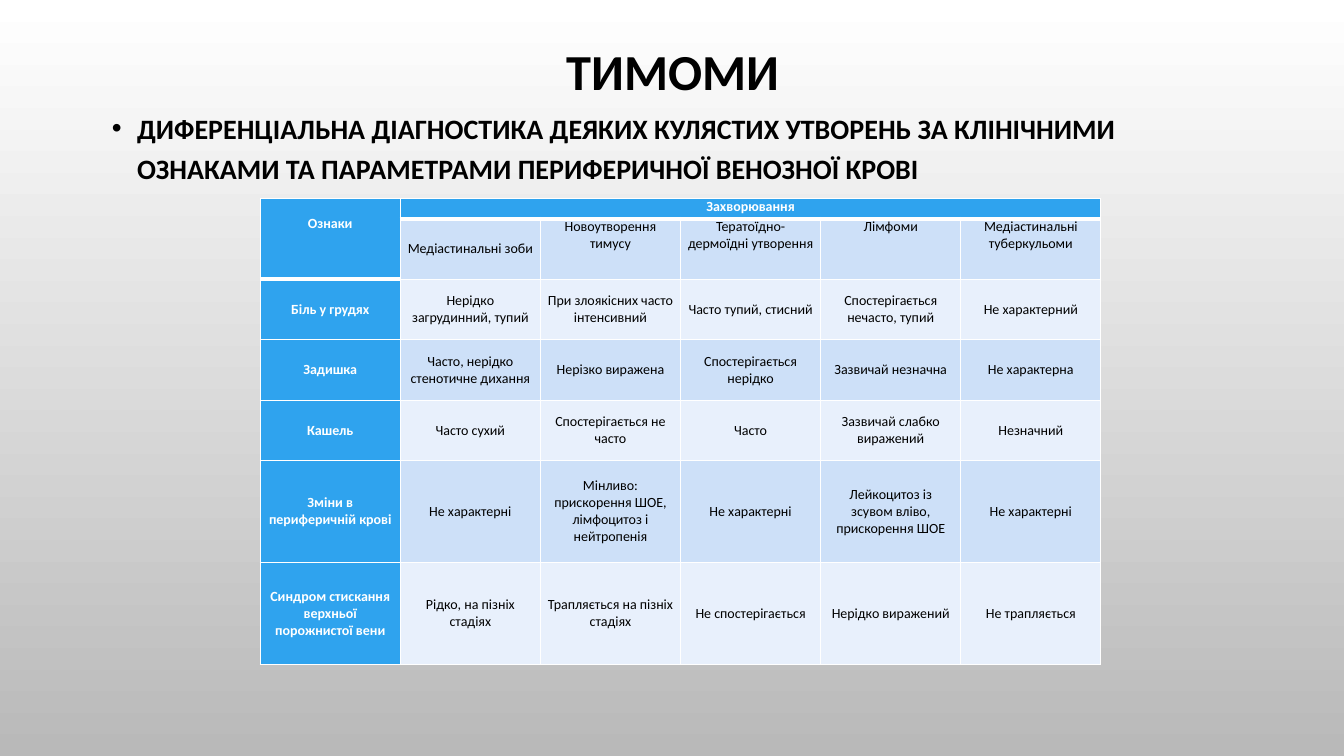
import pptx
import pptx.dml.color
import pptx.enum.text
import pptx.oxml
import pptx.oxml.ns
import pptx.util
from pptx.dml.color import RGBColor
from pptx.util import Inches

FONT = "Calibri"
BLACK = RGBColor(0x00, 0x00, 0x00)
WHITE = RGBColor(0xFF, 0xFF, 0xFF)
GREY = RGBColor(0xB9, 0xB9, 0xB9)
BLUE = RGBColor(0x2F, 0xA3, 0xEE)
BANDS = (RGBColor(0xE8, 0xF0, 0xFC), RGBColor(0xCD, 0xE0, 0xF8))

TOPIC = (
    "ДИФЕРЕНЦІАЛЬНА ДІАГНОСТИКА ДЕЯКИХ КУЛЯСТИХ УТВОРЕНЬ ЗА КЛІНІЧНИМИ "
    "ОЗНАКАМИ ТА ПАРАМЕТРАМИ ПЕРИФЕРИЧНОЇ ВЕНОЗНОЇ КРОВІ"
)
COLUMN_WIDTH = 1.39
ROW_HEIGHTS = [0.2, 0.6, 0.6, 0.6, 0.6, 1.01, 1.01]
ROWS = [
    ["Ознаки", "Захворювання", "", "", "", ""],
    ["", "Медіастинальні зоби", "Новоутворення тимусу",
     "Тератоїдно-дермоїдні утворення", "Лімфоми", "Медіастинальні туберкульоми"],
    ["Біль у грудях", "Нерідко загрудинний, тупий", "При злоякісних часто інтенсивний",
     "Часто тупий, стисний", "Спостерігається нечасто, тупий", "Не характерний"],
    ["Задишка", "Часто, нерідко стенотичне дихання", "Нерізко виражена",
     "Спостерігається нерідко", "Зазвичай незначна", "Не характерна"],
    ["Кашель", "Часто сухий", "Спостерігається не часто", "Часто",
     "Зазвичай слабко виражений", "Незначний"],
    ["Зміни в периферичній крові", "Не характерні",
     "Мінливо: прискорення ШОЕ, лімфоцитоз і нейтропенія", "Не характерні",
     "Лейкоцитоз із зсувом вліво, прискорення ШОЕ", "Не характерні"],
    ["Синдром стискання верхньої порожнистої вени", "Рідко, на пізніх стадіях",
     "Трапляється на пізніх стадіях", "Не спостерігається", "Нерідко виражений",
     "Не трапляється"],
]


def add_run(paragraph, text, size, color, bold=True):
    """Add a formatted run to a paragraph."""
    run = paragraph.add_run()
    run.text = text
    run.font.name = FONT
    run.font.size = pptx.util.Pt(size)
    run.font.bold = bold
    run.font.color.rgb = color


def set_background(slide):
    """Fill the slide with a vertical white to grey gradient."""
    fill = slide.background.fill
    fill.gradient()
    fill.gradient_angle = 270
    for stop, position, color in zip(fill.gradient_stops, (0, 1), (WHITE, GREY)):
        stop.position = position
        stop.color.rgb = color


def fill_placeholder(shape, place, text, size, anchor, line_spacing):
    """Move a placeholder, write its text and return the paragraph."""
    shape.left, shape.top, shape.width, shape.height = map(Inches, place)
    frame = shape.text_frame
    frame.word_wrap = True
    frame.auto_size = pptx.enum.text.MSO_AUTO_SIZE.NONE
    frame.vertical_anchor = anchor
    paragraph = frame.paragraphs[0]
    paragraph.line_spacing = line_spacing
    paragraph.space_before = pptx.util.Pt(0)
    add_run(paragraph, text, size, BLACK)
    return paragraph


def add_bullet(paragraph, indent):
    """Give a paragraph a black round bullet with a hanging indent."""
    properties = paragraph._p.get_or_add_pPr()
    properties.set("marL", str(Inches(indent)))
    properties.set("indent", str(-Inches(indent)))
    namespace = pptx.oxml.ns.nsdecls("a")
    for xml in (
        f'<a:buClr {namespace}><a:srgbClr val="{BLACK}"/></a:buClr>',
        f'<a:buFont {namespace} typeface="Arial"/>',
        f'<a:buChar {namespace} char="•"/>',
    ):
        properties.append(pptx.oxml.parse_xml(xml))


def is_above_thick_line(row, column):
    """Tell whether a cell ends at the thick line under the headings."""
    return row == 0 or (row == 1 and column == 0)


def set_borders(cell, row, column):
    """Draw white cell borders, thick under the headings."""
    thick_top = row > 0 and is_above_thick_line(row - 1, column)
    thick_bottom = is_above_thick_line(row, column)
    widths = {"L": 1, "R": 1, "T": 3 if thick_top else 1, "B": 3 if thick_bottom else 1}
    properties = cell._tc.get_or_add_tcPr()
    for side, width in widths.items():
        properties.append(pptx.oxml.parse_xml(
            f'<a:ln{side} {pptx.oxml.ns.nsdecls("a")} w="{pptx.util.Pt(width)}">'
            f'<a:solidFill><a:srgbClr val="{WHITE}"/></a:solidFill></a:ln{side}>'
        ))


def format_cell(cell, row, column, text):
    """Write and style one table cell."""
    heading = row == 0 or column == 0
    top_aligned = row == 0 or (row == 1 and column > 1)
    set_borders(cell, row, column)
    cell.fill.solid()
    cell.fill.fore_color.rgb = BLUE if heading else BANDS[row % 2]
    cell.margin_left = cell.margin_right = Inches(0.07)
    cell.margin_top = Inches(0.17 if row == column == 0 else 0)
    cell.margin_bottom = Inches(0)
    anchors = pptx.enum.text.MSO_ANCHOR
    cell.vertical_anchor = anchors.TOP if top_aligned else anchors.MIDDLE
    paragraph = cell.text_frame.paragraphs[0]
    paragraph.alignment = pptx.enum.text.PP_ALIGN.CENTER
    paragraph.font.size = pptx.util.Pt(10)
    if text:
        add_run(paragraph, text, 10, WHITE if heading else BLACK, heading)


def add_diagnosis_table(slide):
    """Add the table that compares the diseases by their signs."""
    columns = len(ROWS[0])
    table = slide.shapes.add_table(
        len(ROWS), columns, Inches(2.58), Inches(1.97),
        Inches(COLUMN_WIDTH * columns), Inches(sum(ROW_HEIGHTS)),
    ).table
    table.horz_banding = False
    for column in table.columns:
        column.width = Inches(COLUMN_WIDTH)
    for row, height in zip(table.rows, ROW_HEIGHTS):
        row.height = Inches(height)
    table.cell(0, 0).merge(table.cell(1, 0))
    table.cell(0, 1).merge(table.cell(0, columns - 1))
    for row, texts in enumerate(ROWS):
        for column, text in enumerate(texts):
            format_cell(table.cell(row, column), row, column, text)


def main():
    """Build the slide and save it."""
    presentation = pptx.Presentation()
    presentation.slide_width = Inches(13.33)
    presentation.slide_height = Inches(7.5)
    slide = presentation.slides.add_slide(presentation.slide_layouts[1])
    set_background(slide)
    anchors = pptx.enum.text.MSO_ANCHOR
    title = fill_placeholder(
        slide.shapes.title, (1.01, 0.3, 11.33, 0.87), "ТИМОМИ", 36, anchors.MIDDLE, 0.9)
    title.alignment = pptx.enum.text.PP_ALIGN.CENTER
    topic = fill_placeholder(
        slide.placeholders[1], (1.01, 0.99, 11.33, 0.99), TOPIC, 20, anchors.TOP, 1.2)
    add_bullet(topic, 0.25)
    add_diagnosis_table(slide)
    presentation.save("out.pptx")


if __name__ == "__main__":
    main()
